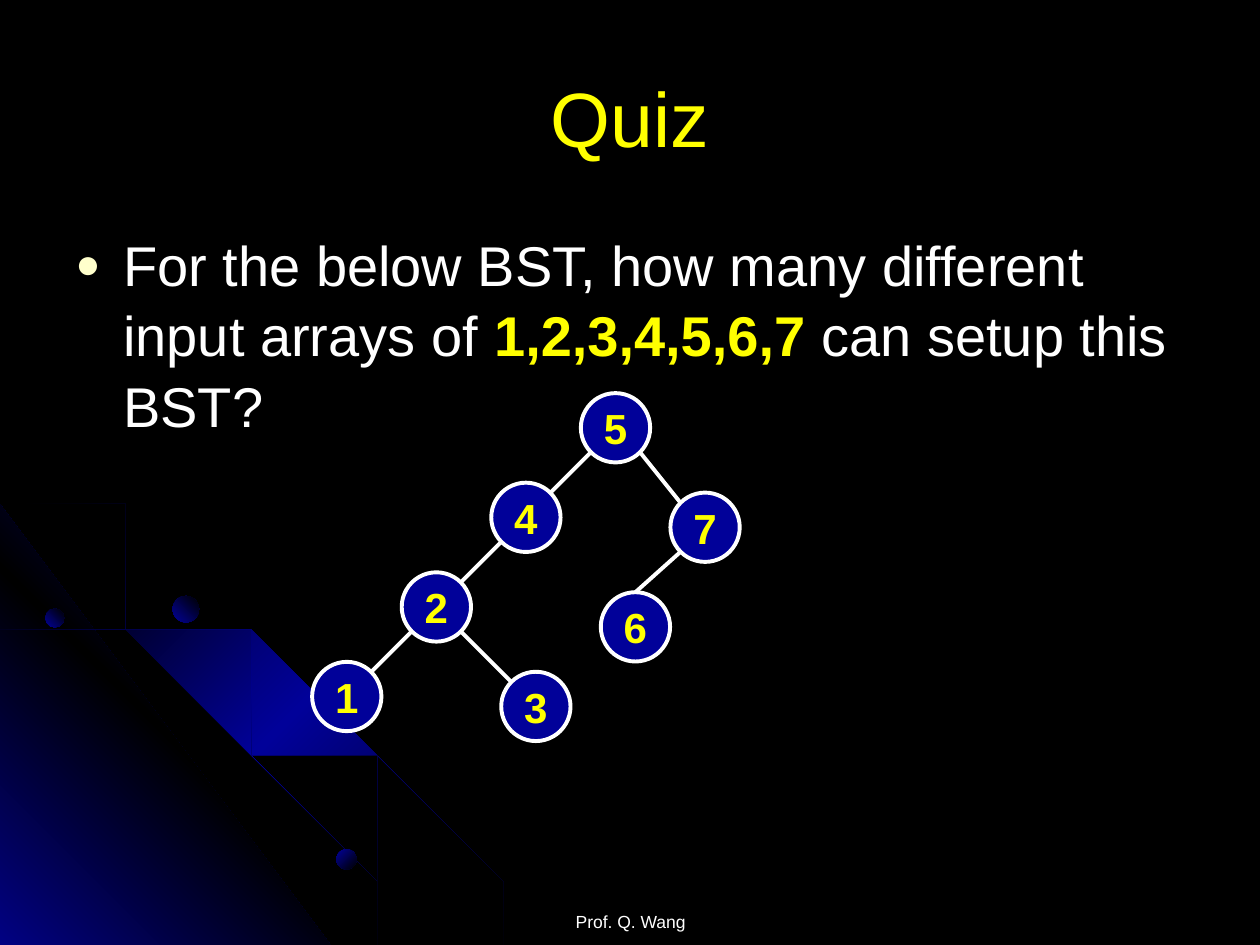
"""Build a quiz slide that shows a binary search tree of seven keys."""
from lxml.etree import SubElement
from pptx import Presentation
from pptx.dml.color import RGBColor
from pptx.enum.shapes import MSO_CONNECTOR, MSO_SHAPE
from pptx.enum.text import MSO_ANCHOR, PP_ALIGN
from pptx.oxml.ns import qn
from pptx.util import Inches, Pt

BLACK = RGBColor(0x00, 0x00, 0x00)
BLUE = RGBColor(0x01, 0x01, 0x99)
WHITE = RGBColor(0xFF, 0xFF, 0xFF)
YELLOW = RGBColor(0xFF, 0xFF, 0x00)
CREAM = RGBColor(0xFF, 0xFF, 0xCC)
W, H = 10, 7.5


def paint_gradient(sp, colors, angle):
    """Fill a borderless shape with evenly spaced colours."""
    sp.shadow.inherit = False
    sp.line.fill.background()
    sp.fill.gradient()
    sp.fill.gradient_angle = angle
    stops = sp._element.spPr.find(".//" + qn("a:gsLst"))
    for stop in list(stops):
        stops.remove(stop)
    for i, color in enumerate(colors):
        stop = SubElement(stops, qn("a:gs"), pos=str(100000 * i // (len(colors) - 1)))
        SubElement(stop, qn("a:srgbClr"), val=str(color))


def add_run(p, text, **formats):
    """Append an Arial run with the given font values."""
    r = p.add_run()
    r.text = text
    r.font.name = "Arial"
    r.font.color.rgb = formats.pop("color")
    for name, value in formats.items():
        setattr(r.font, name, value)


prs = Presentation()
prs.slide_width, prs.slide_height = Inches(W), Inches(H)
s = prs.slides.add_slide(prs.slide_layouts[5])
s.background.fill.solid()
s.background.fill.fore_color.rgb = BLACK

outer_arc = [(0, 4.35), (0.57, 4.47), (0.98, 4.59), (1.36, 4.77), (1.74, 4.97),
             (2.09, 5.21), (2.42, 5.48), (2.72, 5.78), (3, 6.11), (3.25, 6.48),
             (3.52, 6.98), (3.72, H)]
corner = [(0, 4.27), (3.22, H), (0, H)]
inner_arc = [(0, 4.75), (0.41, 4.88), (0.79, 5.05), (1.17, 5.26), (1.52, 5.49),
             (1.84, 5.76), (2.15, 6.06), (2.42, 6.4), (2.66, 6.76), (2.86, 7.12), (3.03, H)]
middle_arc = [(0, 4.42), (0.39, 4.55), (0.76, 4.73), (1.11, 4.93), (1.44, 5.16),
              (1.75, 5.43), (2.04, 5.73), (2.29, 6.03), (2.54, 6.39), (2.82, 6.93), (3.03, H)]

for outline in (outer_arc, corner, inner_arc, middle_arc):
    points, colors, angle = outline, (BLUE, BLACK, BLUE), 45
    if outline is not corner:
        edge = [(max(x - 0.02, 0), min(y + 0.02, H)) for x, y in reversed(outline)]
        points, colors, angle = outline + edge, (BLACK, BLUE, BLACK), 315
    builder = s.shapes.build_freeform(*points[0], scale=Inches(1))
    builder.add_line_segments(points[1:], close=True)
    paint_gradient(builder.convert_to_shape(), colors, angle)

for x, y, size, angle in ((0.36, 4.83, 0.15, 45), (2.67, 6.74, 0.16, 315), (1.37, 4.73, 0.21, 45)):
    ball = s.shapes.add_shape(MSO_SHAPE.OVAL, Inches(x), Inches(y), Inches(size), Inches(size))
    paint_gradient(ball, (BLUE, BLACK), angle)

footer = s.shapes.add_textbox(Inches(0.342 * W), Inches(0.92 * H), Inches(0.317 * W), Inches(0.5))
tf = footer.text_frame
for name, value in {"word_wrap": True, "vertical_anchor": MSO_ANCHOR.BOTTOM, "margin_bottom": 0}.items():
    setattr(tf, name, value)
tf.paragraphs[0].alignment = PP_ALIGN.CENTER
add_run(tf.paragraphs[0], "Prof. Q. Wang", color=WHITE, size=Pt(10))

title = s.shapes.title
for name, value in {"left": 0.05 * W, "top": 0.04 * H, "width": 0.9 * W, "height": H / 6}.items():
    setattr(title, name, Inches(value))
title.text_frame.vertical_anchor = MSO_ANCHOR.MIDDLE
p = title.text_frame.paragraphs[0]
p.alignment = PP_ALIGN.CENTER
add_run(p, "Quiz", color=YELLOW, size=Pt(44))

body = s.shapes.add_textbox(Inches(0.05 * W), Inches(1.75), Inches(0.915 * W), Inches(0.66 * H))
body.text_frame.word_wrap = True
p = body.text_frame.paragraphs[0]
p.line_spacing = 1.05
pPr = p._p.get_or_add_pPr()
pPr.set("marL", str(Inches(0.38)))
pPr.set("indent", str(-Inches(0.38)))
SubElement(SubElement(pPr, qn("a:buClr")), qn("a:srgbClr"), val=str(CREAM))
SubElement(pPr, qn("a:buSzPct"), val="75000")
SubElement(pPr, qn("a:buFont"), typeface="Arial")
SubElement(pPr, qn("a:buChar"), char="●")
for text, color, bold in (
    ("For the below BST, how many different input arrays of ", WHITE, False),
    ("1,2,3,4,5,6,7", YELLOW, True),
    (" can setup this BST?", WHITE, False),
):
    add_run(p, text, color=color, size=Pt(32), bold=bold)

STEP, SIZE, INSET = 0.079, 0.55, 0.08
ROOT_X, ROOT_Y = 4.61, 3.12
cells = {2: (-18, 18), 5: (0, 0), 4: (-9, 9), 7: (9, 10), 6: (2, 20), 1: (-27, 27), 3: (-8, 28)}
nodes = {key: (ROOT_X + col * STEP, ROOT_Y + row * STEP) for key, (col, row) in cells.items()}

for key, (x, y) in nodes.items():
    sp = s.shapes.add_shape(MSO_SHAPE.OVAL, Inches(x), Inches(y), Inches(SIZE), Inches(SIZE))
    sp.shadow.inherit = False
    sp.fill.solid()
    sp.fill.fore_color.rgb = BLUE
    sp.line.color.rgb = WHITE
    sp.line.width = Pt(2.25)
    tf = sp.text_frame
    tf.word_wrap = False
    tf.vertical_anchor = MSO_ANCHOR.MIDDLE
    tf.paragraphs[0].alignment = PP_ALIGN.CENTER
    add_run(tf.paragraphs[0], str(key), color=YELLOW, size=Pt(24), bold=True)

for parent, child in ((5, 4), (2, 1), (7, 6), (2, 3), (4, 2), (5, 7)):
    (x1, y1), (x2, y2) = nodes[parent], nodes[child]
    near, far = (INSET, SIZE - INSET) if child < parent else (SIZE - INSET, INSET)
    drop = INSET
    if child == 6:
        far, drop = SIZE / 2, 0
    branch = s.shapes.add_connector(
        MSO_CONNECTOR.STRAIGHT, Inches(x1 + near), Inches(y1 + SIZE - INSET),
        Inches(x2 + far), Inches(y2 + drop))
    branch.line.color.rgb = WHITE
    branch.line.width = Pt(2.25)
    SubElement(branch._element.spPr, qn("a:effectLst"))

prs.save("out.pptx")
